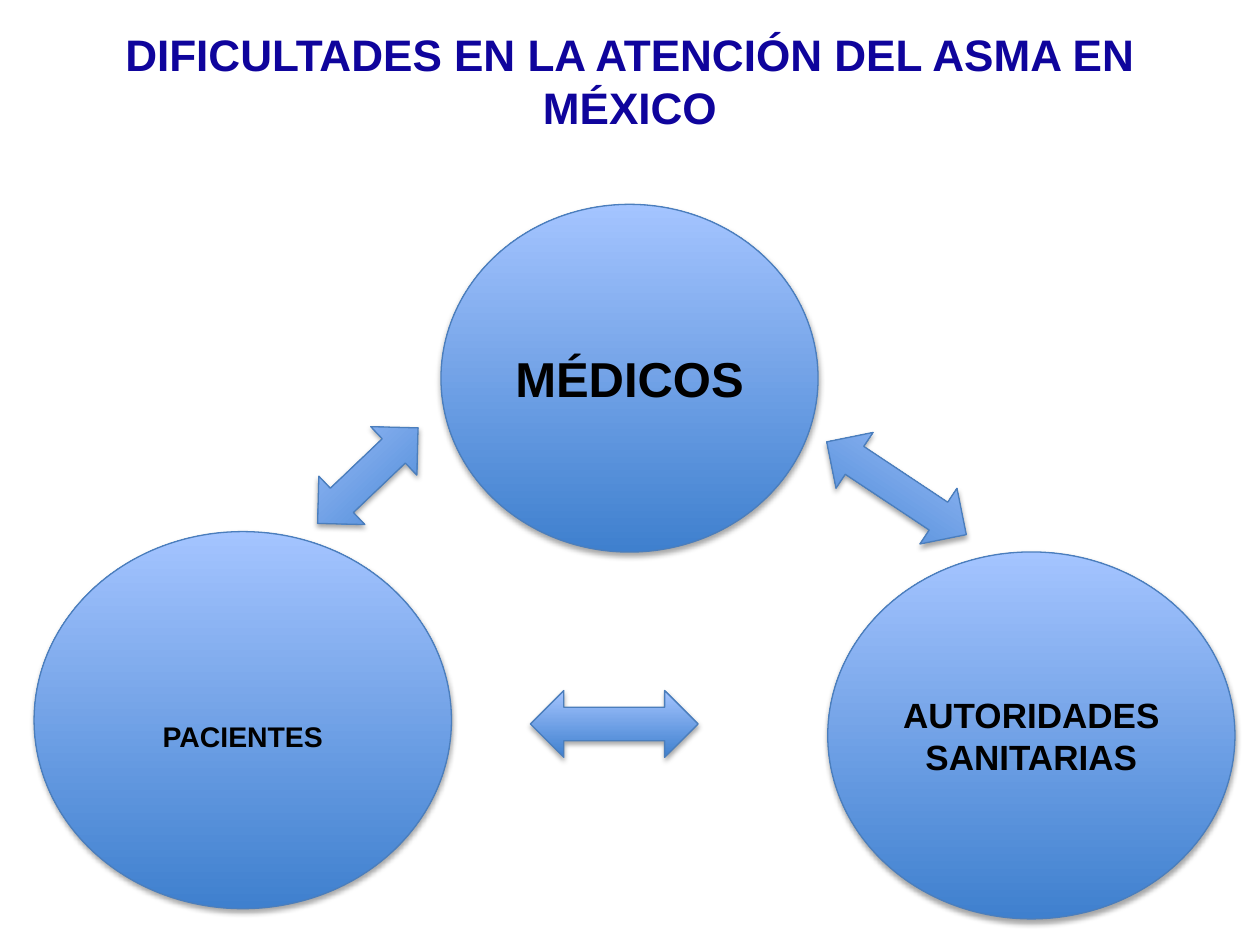
import pptx
import pptx.dml.color
import pptx.enum.shapes
import pptx.enum.text
import pptx.oxml.ns
import pptx.util
from lxml import etree

Pt = pptx.util.Pt
Shapes = pptx.enum.shapes.MSO_SHAPE
qn = pptx.oxml.ns.qn


def color(value):
    return pptx.dml.color.RGBColor.from_string(value)


class AsthmaSlide:
    """Holds the diagram style and the slide being drawn."""

    font = "Arial"
    gradient = ("3F80CE", "A4C4FF")
    outline = "4B7EBC"
    title_color = "0F049C"
    label_color = "000000"

    def __init__(self, presentation):
        self.slide = presentation.slides.add_slide(presentation.slide_layouts[6])

    def label(self, shape, text, size, text_color):
        frame = shape.text_frame
        frame.word_wrap = True
        frame.vertical_anchor = pptx.enum.text.MSO_ANCHOR.MIDDLE
        frame.text = text
        paragraph = frame.paragraphs[0]
        paragraph.alignment = pptx.enum.text.PP_ALIGN.CENTER
        run = paragraph.runs[0]
        run.font.name = self.font
        run.font.size = Pt(size)
        run.font.bold = True
        run.font.color.rgb = color(text_color)
        return run

    def title(self, text, left, top, width, height, size):
        box = self.slide.shapes.add_textbox(Pt(left), Pt(top), Pt(width), Pt(height))
        self.label(box, text, size, self.title_color)

    def shadow(self, shape):
        shape.shadow.inherit = False
        effects = shape._element.spPr.find(qn("a:effectLst"))
        shadow = etree.SubElement(
            effects, qn("a:outerShdw"), blurRad=str(Pt(3.1)), dist=str(Pt(1.8)),
            dir="5400000", rotWithShape="0")
        shade = etree.SubElement(shadow, qn("a:srgbClr"), val="000000")
        etree.SubElement(shade, qn("a:alpha"), val="35000")

    def glossy(self, kind, left, top, width, height):
        shape = self.slide.shapes.add_shape(kind, Pt(left), Pt(top), Pt(width), Pt(height))
        shape.fill.gradient()
        shape.fill.gradient_angle = 90
        for position, (stop, value) in enumerate(zip(shape.fill.gradient_stops, self.gradient)):
            stop.position = position
            stop.color.rgb = color(value)
        shape.line.color.rgb = color(self.outline)
        shape.line.width = Pt(0.75)
        self.shadow(shape)
        return shape

    def circle(self, text, left, top, width, height, size, baseline=0):
        shape = self.glossy(Shapes.OVAL, left, top, width, height)
        run = self.label(shape, text, size, self.label_color)
        if baseline:
            run._r.get_or_add_rPr().set("baseline", str(baseline * 1000))

    def arrow(self, left, top, width, rotation=0):
        shape = self.glossy(Shapes.LEFT_RIGHT_ARROW, left, top, width, 38.2)
        shape.rotation = rotation


def main():
    presentation = pptx.Presentation()
    presentation.slide_width = Pt(720)
    presentation.slide_height = Pt(540)
    diagram = AsthmaSlide(presentation)
    diagram.title("DIFICULTADES EN LA ATENCIÓN DEL ASMA EN MÉXICO", 36, 9.4, 648, 72.7, 25.2)
    diagram.circle("PACIENTES", 19.5, 303.8, 238.5, 215.5, 28, baseline=-25)
    diagram.circle("MÉDICOS", 252, 116.8, 215.5, 198.7, 28)
    diagram.circle("AUTORIDADES SANITARIAS", 473, 315.4, 232.7, 209.7, 20)
    diagram.arrow(170.6, 252.7, 79.2, 316.4)
    diagram.arrow(464.4, 259.9, 95.8, 33.6)
    diagram.arrow(303.1, 394.6, 95.8)
    presentation.save("out.pptx")


if __name__ == "__main__":
    main()
